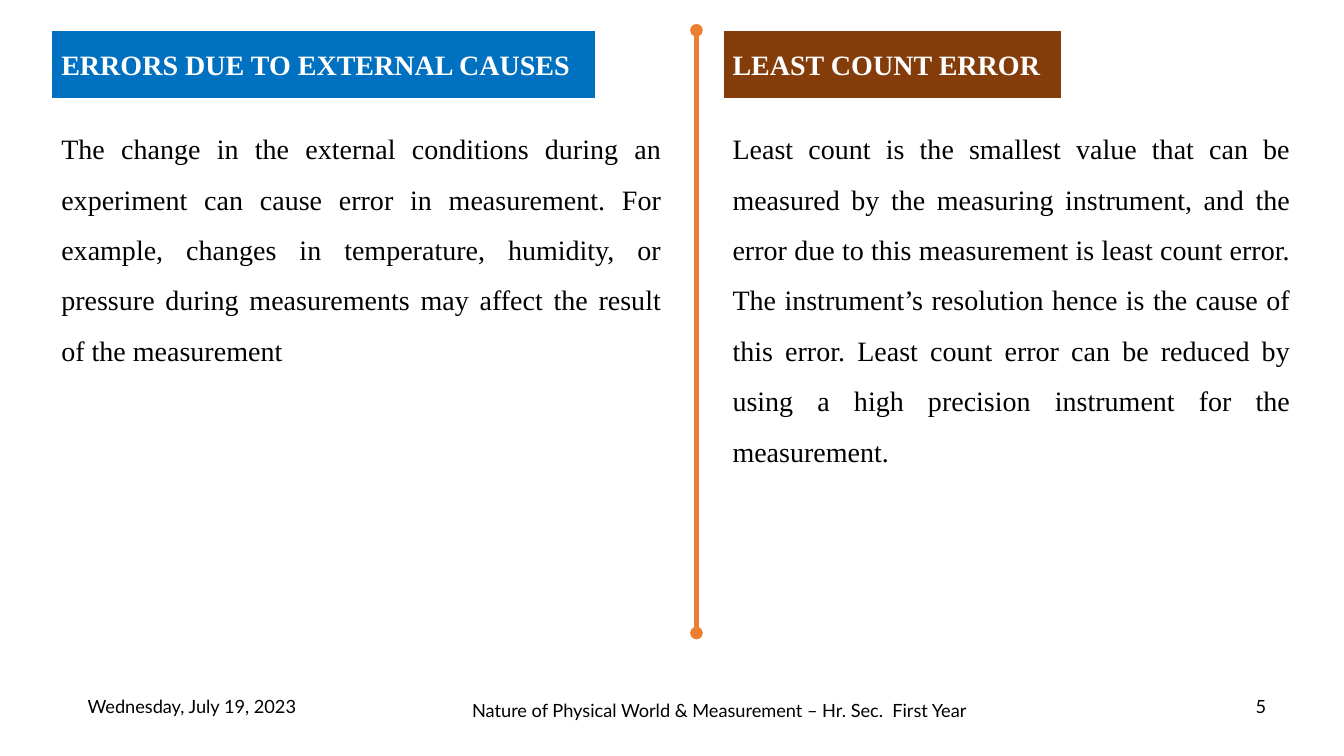
from lxml import etree
from pptx import Presentation
from pptx.dml.color import RGBColor
from pptx.enum import shapes, text
from pptx.oxml import ns
from pptx.util import Pt

BLACK = RGBColor(0x00, 0x00, 0x00)
WHITE = RGBColor(0xFF, 0xFF, 0xFF)
BLUE = RGBColor(0x00, 0x70, 0xC0)
BROWN = RGBColor(0x84, 0x3C, 0x0B)
ORANGE = RGBColor(0xED, 0x7D, 0x31)
SERIF, SANS = "Times New Roman", "Lato"

HEADING_TOP, HEADING_HEIGHT = 21.6, 49
BODY_GAP = 8

EXTERNAL_CAUSES = (
    "The change in the external conditions during an experiment can cause "
    "error in measurement. For example, changes in temperature, humidity, or "
    "pressure during measurements may affect the result of the measurement"
)
LEAST_COUNT = (
    "Least count is the smallest value that can be measured by the measuring "
    "instrument, and the error due to this measurement is least count error. "
    "The instrument’s resolution hence is the cause of this error. Least count "
    "error can be reduced by using a high precision instrument for the "
    "measurement."
)


def write(sp, words, font, size, color, align, bold=False):
    tf = sp.text_frame
    tf.word_wrap = True
    p = tf.paragraphs[0]
    p.text = words
    p.alignment = align
    p.font.name, p.font.size, p.font.bold = font, Pt(size), bold
    p.font.color.rgb = color
    return tf


def add_topic(slide, left, width, height, heading, heading_width, fill, body):
    """A coloured heading bar with a justified paragraph under it."""
    sp = slide.shapes.add_shape(
        shapes.MSO_SHAPE.RECTANGLE,
        Pt(left), Pt(HEADING_TOP), Pt(heading_width), Pt(HEADING_HEIGHT))
    sp.shadow.inherit = False
    sp.fill.solid()
    sp.fill.fore_color.rgb = fill
    sp.line.color.rgb = WHITE
    sp.line.width = Pt(1.5)
    tf = write(sp, heading, SERIF, 20, WHITE, text.PP_ALIGN.LEFT, bold=True)
    tf.vertical_anchor = text.MSO_ANCHOR.MIDDLE

    body_top = HEADING_TOP + HEADING_HEIGHT + BODY_GAP
    sp = slide.shapes.add_textbox(Pt(left), Pt(body_top), Pt(width), Pt(height))
    tf = write(sp, body, SERIF, 20, BLACK, text.PP_ALIGN.JUSTIFY)
    tf.auto_size = text.MSO_AUTO_SIZE.SHAPE_TO_FIT_TEXT
    tf.paragraphs[0].line_spacing = 1.5


def add_divider(slide, x, top, bottom):
    """A vertical line with a dot at each end."""
    line = slide.shapes.add_connector(
        shapes.MSO_CONNECTOR.STRAIGHT, Pt(x), Pt(top), Pt(x), Pt(bottom))
    line.line.color.rgb = ORANGE
    line.line.width = Pt(3)
    ln = line.line._get_or_add_ln()
    for end in ("a:headEnd", "a:tailEnd"):
        etree.SubElement(ln, ns.qn(end), type="oval")
    etree.SubElement(line._element.spPr, ns.qn("a:effectLst"))


def add_footer_item(slide, left, top, width, words):
    sp = slide.shapes.add_textbox(Pt(left), Pt(top), Pt(width), Pt(28.8))
    tf = write(sp, words, SANS, 13, BLACK, text.PP_ALIGN.CENTER)
    tf.vertical_anchor = text.MSO_ANCHOR.MIDDLE


def main():
    prs = Presentation()
    prs.slide_width, prs.slide_height = Pt(960), Pt(540)
    slide = prs.slides.add_slide(prs.slide_layouts[6])

    add_footer_item(slide, 51, 490.3, 172, "Wednesday, July 19, 2023")
    add_footer_item(slide, 885.6, 490.3, 30.2, "5")
    add_footer_item(
        slide, 327.6, 493.2, 372.2,
        "Nature of Physical World & Measurement – Hr. Sec.  First Year")

    add_divider(slide, 497.5, 21.6, 452.2)
    add_topic(slide, 36.7, 442.8, 185, "ERRORS DUE TO EXTERNAL CAUSES", 388.8,
              BLUE, EXTERNAL_CAUSES)
    add_topic(slide, 516.2, 412.6, 257, "LEAST COUNT ERROR", 242.6,
              BROWN, LEAST_COUNT)

    prs.save("out.pptx")


if __name__ == "__main__":
    main()
